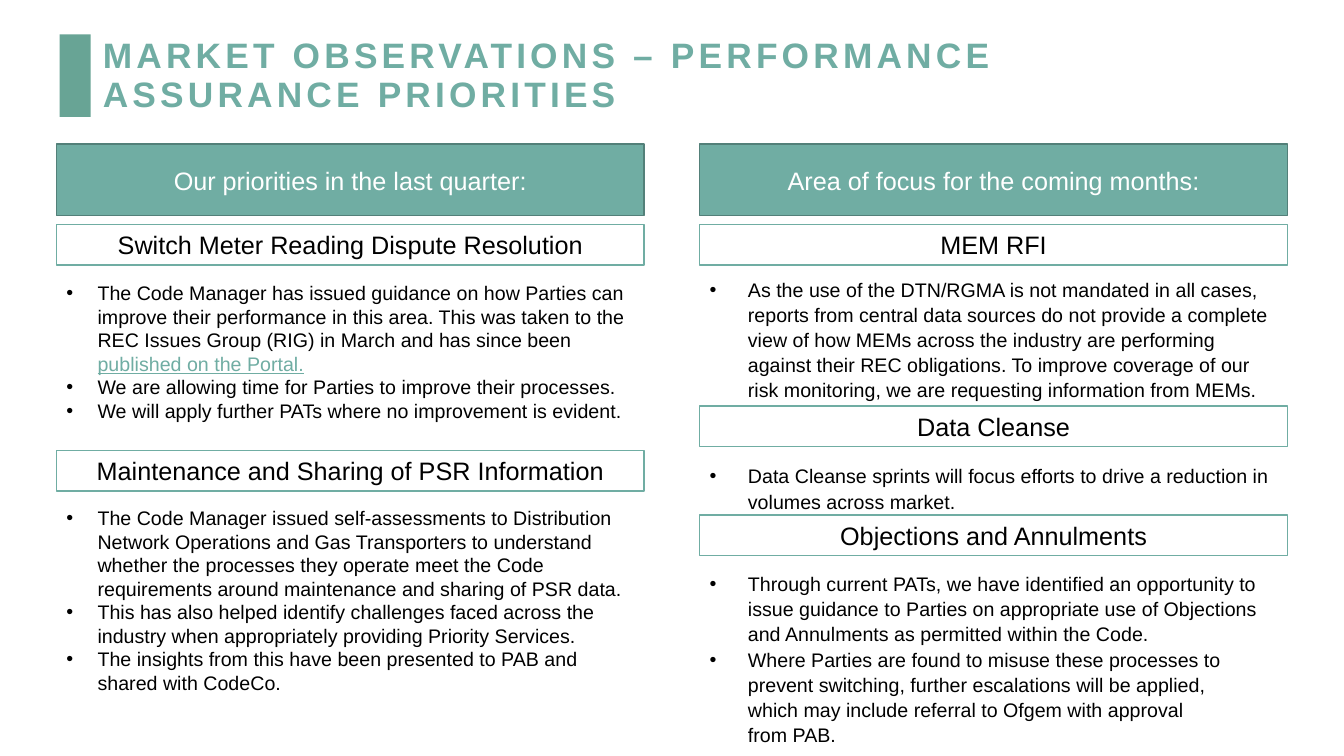
import pptx
import pptx.util
import pptx.dml.color
import pptx.enum.shapes
import pptx.enum.text
from dataclasses import dataclass
from lxml import etree
from pptx.oxml.ns import qn

Inches = pptx.util.Inches
RGB = pptx.dml.color.RGBColor.from_string
ALIGN = pptx.enum.text.PP_ALIGN
ANCHOR = pptx.enum.text.MSO_ANCHOR
FIT = pptx.enum.text.MSO_AUTO_SIZE


@dataclass(frozen=True)
class Theme:
    font: str = "Arial"
    accent: str = "70ADA3"
    marker: str = "68A495"
    edge: str = "538079"
    white: str = "FFFFFF"
    black: str = "000000"
    title: float = 25.2
    heading: float = 18
    body: float = 14


T = Theme()


def write(sp, paragraphs, size, color=T.black, align=ALIGN.LEFT, anchor=ANCHOR.TOP,
          fit=FIT.NONE, bold=False, tracking=None, spacing=None, indent=None):
    """Fill a shape; a (text, linked text) pair ends in accent underline, indent adds bullets."""
    tf = sp.text_frame
    tf.word_wrap, tf.auto_size, tf.vertical_anchor = True, fit, anchor
    for i, parts in enumerate(paragraphs):
        p = tf.add_paragraph() if i else tf.paragraphs[0]
        if indent:
            pPr = p._p.get_or_add_pPr()
            pPr.set("marL", str(Inches(indent)))
            pPr.set("indent", str(-Inches(indent)))
            etree.SubElement(pPr, qn("a:buFont")).set("typeface", T.font)
            etree.SubElement(pPr, qn("a:buChar")).set("char", "•")
        p.alignment = align
        if spacing:
            p.line_spacing = spacing
        for j, text in enumerate([parts] if isinstance(parts, str) else parts):
            for n, line in enumerate(text.split("\n")):
                if n:
                    p.add_line_break()
                r = p.add_run()
                r.text = line
                r.font.name, r.font.size, r.font.bold = T.font, pptx.util.Pt(size), bold
                r.font.color.rgb = RGB(T.accent if j else color)
                if j:
                    r.font.underline = True
                if tracking:
                    r._r.get_or_add_rPr().set("spc", str(tracking * 100))


def add_box(s, left, top, width, height, fill, line=None):
    sp = s.shapes.add_shape(pptx.enum.shapes.MSO_SHAPE.RECTANGLE,
                            Inches(left), Inches(top), Inches(width), Inches(height))
    sp.shadow.inherit = False
    sp.fill.solid()
    sp.fill.fore_color.rgb = RGB(fill)
    if line:
        sp.line.color.rgb = RGB(line)
        sp.line.width = pptx.util.Pt(1)
    else:
        sp.line.fill.background()
    return sp


prs = pptx.Presentation()
prs.slide_width, prs.slide_height = Inches(13.33), Inches(7.5)
s = prs.slides.add_slide(prs.slide_layouts[5])

add_box(s, 0.59, 0.34, 0.31, 0.82, T.marker)
title = s.shapes.title
title.left, title.top, title.width, title.height = map(Inches, (0.92, 0.4, 10.15, 0.72))
write(title, ["MARKET OBSERVATIONS – PERFORMANCE ASSURANCE PRIORITIES"], T.title, T.accent,
      anchor=ANCHOR.MIDDLE, bold=True, tracking=3, spacing=0.9)

# Each section: heading, heading top, body top, body height, bullets
COLUMN_WIDTH = 5.83
columns = [
    (0.56, "Our priorities in the last quarter:", 0.31, None, [
        ("Switch Meter Reading Dispute Resolution", 2.23, 2.74, 1.51, [
            ("The Code Manager has issued guidance on how Parties can improve their performance "
             "in this area. This was taken to the REC Issues Group (RIG) in March and has since "
             "been ", "published on the Portal."),
            "We are allowing time for Parties to improve their processes.",
            "We will apply further PATs where no improvement is evident.",
        ]),
        ("Maintenance and Sharing of PSR Information", 4.47, 4.97, 1.99, [
            "The Code Manager issued self-assessments to Distribution Network Operations and Gas "
            "Transporters to understand whether the processes they operate meet the Code "
            "requirements around maintenance and sharing of PSR data.",
            "This has also helped identify challenges faced across the industry when "
            "appropriately providing Priority Services.",
            "The insights from this have been presented to PAB and shared with CodeCo.",
        ]),
    ]),
    (6.94, "Area of focus for the coming months:", 0.38, 1.07, [
        ("MEM RFI", 2.23, 2.69, 1.34, [
            "As the use of the DTN/RGMA is not mandated in all cases, reports from central data "
            "sources do not provide a complete view of how MEMs across the industry are "
            "performing against their REC obligations. To improve coverage of our risk "
            "monitoring, we are requesting information from MEMs.",
        ]),
        ("Data Cleanse", 4.03, 4.54, 0.59, [
            "Data Cleanse sprints will focus efforts to drive a reduction in volumes across "
            "market.",
        ]),
        ("Objections and Annulments", 5.11, 5.61, 1.85, [
            "Through current PATs, we have identified an opportunity to issue guidance to Parties "
            "on appropriate use of Objections and Annulments as permitted within the Code.",
            "Where Parties are found to misuse these processes to prevent switching, further "
            "escalations will be applied,\nwhich may include referral to Ofgem with approval\n"
            "from PAB.",
        ]),
    ]),
]

for left, header, indent, spacing, sections in columns:
    sp = add_box(s, left, 1.43, COLUMN_WIDTH, 0.71, T.accent, T.edge)
    write(sp, [header], T.heading, T.white, ALIGN.CENTER, ANCHOR.MIDDLE)
    for heading, top, body_top, body_height, bullets in sections:
        sp = add_box(s, left, top, COLUMN_WIDTH, 0.4, T.white, T.accent)
        write(sp, [heading], T.heading, align=ALIGN.CENTER, fit=FIT.SHAPE_TO_FIT_TEXT)
        body = s.shapes.add_textbox(Inches(left), Inches(body_top),
                                    Inches(COLUMN_WIDTH), Inches(body_height))
        write(body, bullets, T.body, fit=FIT.SHAPE_TO_FIT_TEXT, spacing=spacing, indent=indent)

prs.save("out.pptx")
